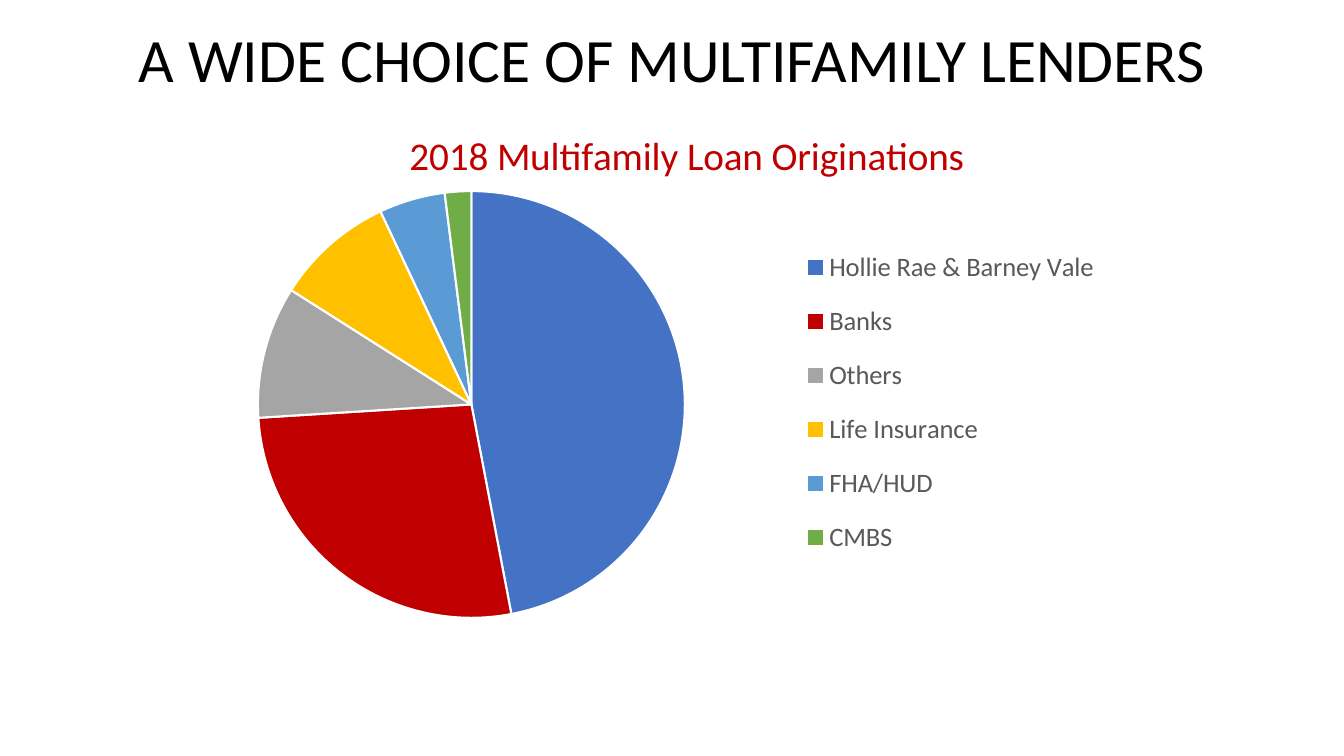
import pptx
import pptx.util
import pptx.dml.color
import pptx.chart.data
import pptx.enum.chart
import pptx.enum.text
import pptx.oxml

FONT = "Calibri"
WIDTH, HEIGHT = 13.33, 7.5
SHARES = [
    ("Hollie Rae & Barney Vale", 47, "4472C4"),
    ("Banks", 27, "C00000"),
    ("Others", 10, "A5A5A5"),
    ("Life Insurance", 9, "FFC000"),
    ("FHA/HUD", 5, "5B9BD5"),
    ("CMBS", 2, "70AD47"),
]


def rgb(value):
    return pptx.dml.color.RGBColor.from_string(value)


def set_font(font, size, color):
    font.name = FONT
    font.size = pptx.util.Pt(size)
    font.bold = False
    font.color.rgb = rgb(color)


def inches(box):
    return [pptx.util.Inches(v) for v in box]


def set_layout(parent, after, percents, inner=False):
    for old in parent.findall(pptx.oxml.ns.qn("c:layout")):
        parent.remove(old)
    target = '<c:layoutTarget val="inner"/>' if inner else ""
    modes = '<c:xMode val="edge"/><c:yMode val="edge"/>'
    sizes = "".join(f'<c:{k} val="{v / 100:.3f}"/>' for k, v in zip("xywh", percents))
    layout = pptx.oxml.parse_xml(
        f'<c:layout {pptx.oxml.ns.nsdecls("c")}><c:manualLayout>'
        f"{target}{modes}{sizes}</c:manualLayout></c:layout>"
    )
    if after is None:
        parent.insert(0, layout)
    else:
        parent.find(pptx.oxml.ns.qn(after)).addnext(layout)


def add_title(slide, box, text):
    tf = slide.shapes.add_textbox(*inches(box)).text_frame
    tf.word_wrap = True
    tf.vertical_anchor = pptx.enum.text.MSO_ANCHOR.MIDDLE
    p = tf.paragraphs[0]
    p.alignment = pptx.enum.text.PP_ALIGN.CENTER
    p.line_spacing = 0.9
    r = p.add_run()
    r.text = text
    set_font(r.font, 44, "000000")


def add_pie(slide, box, heading):
    data = pptx.chart.data.CategoryChartData()
    data.categories = [name for name, _, _ in SHARES]
    data.add_series("Series 1", [value for _, value, _ in SHARES])
    kind = pptx.enum.chart.XL_CHART_TYPE.PIE
    chart = slide.shapes.add_chart(kind, *inches(box), data).chart
    set_font(chart.font, 10, "000000")

    chart.has_title = True
    r = chart.chart_title.text_frame.paragraphs[0].add_run()
    r.text = heading
    set_font(r.font, 28, "C00000")
    chart.chart_title.include_in_layout = False
    set_layout(chart.chart_title._element, "c:tx", (24.3, 3))

    chart.has_legend = True
    chart.legend.position = pptx.enum.chart.XL_LEGEND_POSITION.BOTTOM
    chart.legend.include_in_layout = False
    set_font(chart.legend.font, 19, "595959")
    set_layout(chart.legend._element, "c:legendPos", (58, 21.3, 32, 58.2))

    plot = chart.plots[0]
    plot.vary_by_categories = True
    set_layout(plot._element.getparent(), None, (11.2, 14.7, 38.7, 71.9), True)
    for i, (_, _, color) in enumerate(SHARES):
        fmt = plot.series[0].points[i].format
        fmt.fill.solid()
        fmt.fill.fore_color.rgb = rgb(color)
        fmt.line.color.rgb = rgb("FFFFFF")
        fmt.line.width = pptx.util.Pt(1.5)


def main():
    prs = pptx.Presentation()
    prs.slide_width, prs.slide_height = inches((WIDTH, HEIGHT))
    slide = prs.slides.add_slide(prs.slide_layouts[6])
    add_title(slide, (0.19, 0.08, 12.96, 1.09),
              "A WIDE CHOICE OF MULTIFAMILY LENDERS")
    add_pie(slide, (WIDTH * 0.1, 1.03, 10.94, 5.89),
            "2018 Multifamily Loan Originations")
    prs.save("out.pptx")


if __name__ == "__main__":
    main()
